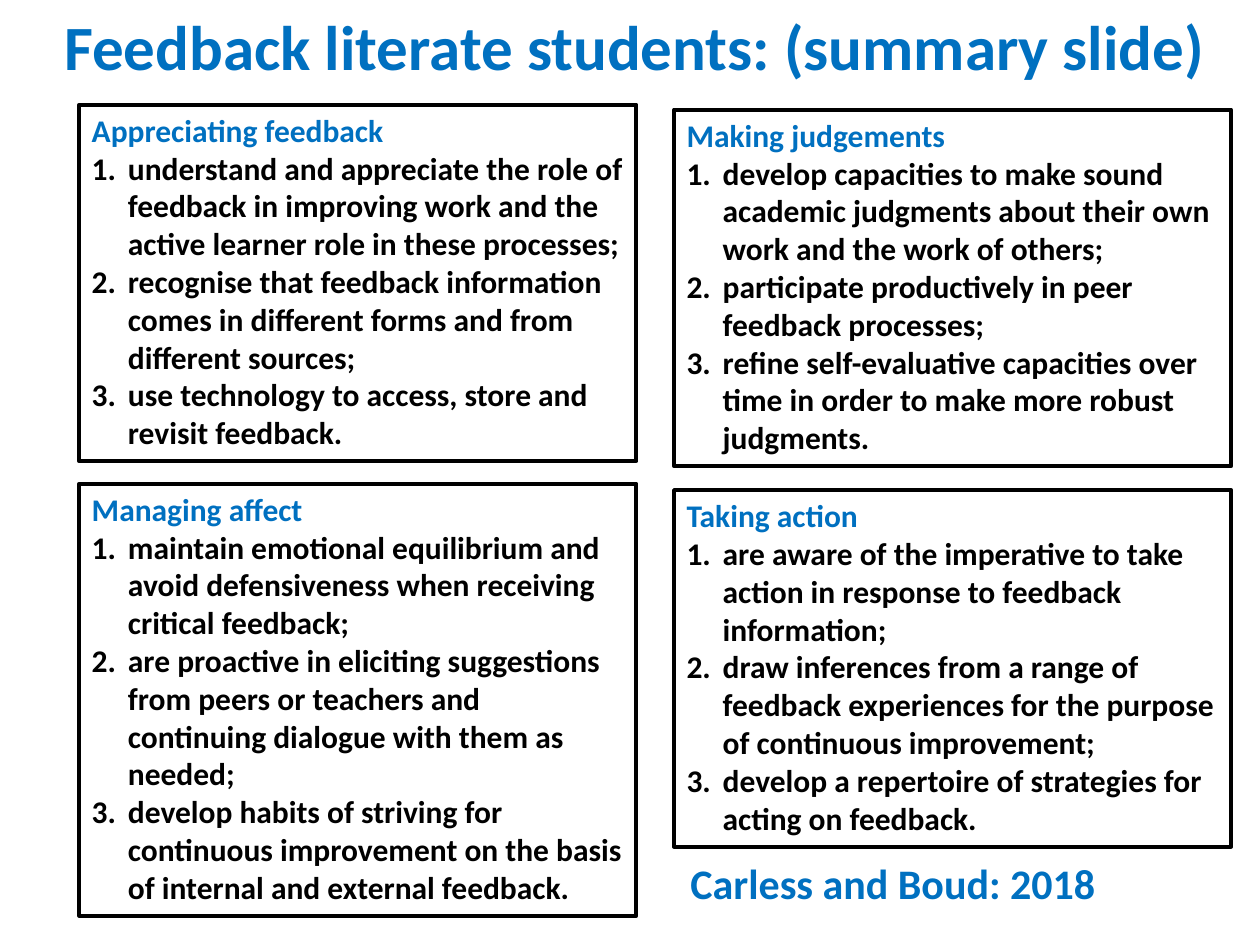
from lxml.etree import SubElement
from pptx import Presentation
from pptx.dml.color import RGBColor
from pptx.enum.shapes import MSO_SHAPE as Shape
from pptx.enum.text import MSO_ANCHOR as Anchor, MSO_AUTO_SIZE as AutoSize, PP_ALIGN as Align
from pptx.oxml.ns import qn
from pptx.util import Cm, Pt

COLORS = {"accent": "0070C0", "ink": "000000"}
COLUMNS = (1.6, 13.59)
PANEL_WIDTH = 11.23

# Column, top, height, heading, numbered points
PANELS = [
    (0, 2.11, 7.19, "Appreciating feedback", [
        "understand and appreciate the role of feedback in improving work and the "
        "active learner role in these processes;",
        "recognise that feedback information comes in different forms and from different sources;",
        "use technology to access, store and revisit feedback."]),
    (1, 2.21, 7.19, "Making judgements", [
        "develop capacities to make sound academic judgments about their own work "
        "and the work of others;",
        "participate productively in peer feedback processes;",
        "refine self-evaluative capacities over time in order to make more robust judgments."]),
    (0, 9.75, 8.71, "Managing affect", [
        "maintain emotional equilibrium and avoid defensiveness when receiving critical feedback;",
        "are proactive in eliciting suggestions from peers or teachers and continuing "
        "dialogue with them as needed;",
        "develop habits of striving for continuous improvement on the basis of internal "
        "and external feedback."]),
    (1, 9.88, 7.19, "Taking action", [
        "are aware of the imperative to take action in response to feedback information;",
        "draw inferences from a range of feedback experiences for the purpose of "
        "continuous improvement;",
        "develop a repertoire of strategies for acting on feedback."]),
]


def write(paragraph, text, size=18, color="ink", align=Align.LEFT, spacing=None, numbered=False):
    if numbered:
        props = paragraph._p.get_or_add_pPr()
        indent = Cm(0.73)
        props.set("marL", str(indent))
        props.set("indent", str(-indent))
        SubElement(props, qn("a:buFont"), typeface="+mj-lt")
        SubElement(props, qn("a:buAutoNum"), type="arabicPeriod")
    paragraph.alignment = align
    if spacing:
        paragraph.line_spacing = spacing
    run = paragraph.add_run()
    run.text = text
    run.font.name = "Calibri"
    run.font.size = Pt(size)
    run.font.bold = True
    run.font.color.rgb = RGBColor.from_string(COLORS[color])


class SummarySlide:
    def __init__(self, deck):
        self.slide = deck.slides.add_slide(deck.slide_layouts[5])

    def title(self, text, left, top, width, height):
        title = self.slide.shapes.title
        title.left, title.top, title.width, title.height = map(Cm, (left, top, width, height))
        frame = title.text_frame
        frame.auto_size = AutoSize.NONE
        frame.vertical_anchor = Anchor.MIDDLE
        write(frame.paragraphs[0], text, size=36, color="accent", align=Align.CENTER, spacing=0.85)

    def panel(self, column, top, height, heading, points):
        panel = self.slide.shapes.add_shape(
            Shape.RECTANGLE, Cm(COLUMNS[column]), Cm(top), Cm(PANEL_WIDTH), Cm(height))
        panel.shadow.inherit = False
        panel.fill.background()
        panel.line.color.rgb = RGBColor.from_string(COLORS["ink"])
        panel.line.width = Pt(2.25)
        frame = panel.text_frame
        frame.word_wrap = True
        frame.auto_size = AutoSize.SHAPE_TO_FIT_TEXT
        frame.vertical_anchor = Anchor.TOP
        write(frame.paragraphs[0], heading, color="accent")
        for point in points:
            write(frame.add_paragraph(), point, numbered=True)

    def citation(self, text, left, top, width, height):
        citation = self.slide.shapes.add_textbox(*map(Cm, (left, top, width, height)))
        frame = citation.text_frame
        frame.word_wrap = True
        frame.auto_size = AutoSize.SHAPE_TO_FIT_TEXT
        write(frame.paragraphs[0], text, size=24, color="accent")


def main():
    deck = Presentation()
    deck.slide_width, deck.slide_height = Cm(25.4), Cm(19.05)
    summary = SummarySlide(deck)

    # Title
    summary.title("Feedback literate students: (summary slide)", 0.69, 0.53, 24.21, 1.02)

    # Four features of feedback literacy
    for panel in PANELS:
        summary.panel(*panel)

    # Source of the framework
    summary.citation("Carless and Boud: 2018", 13.67, 17.17, 10.69, 1.27)

    deck.save("out.pptx")


if __name__ == "__main__":
    main()
